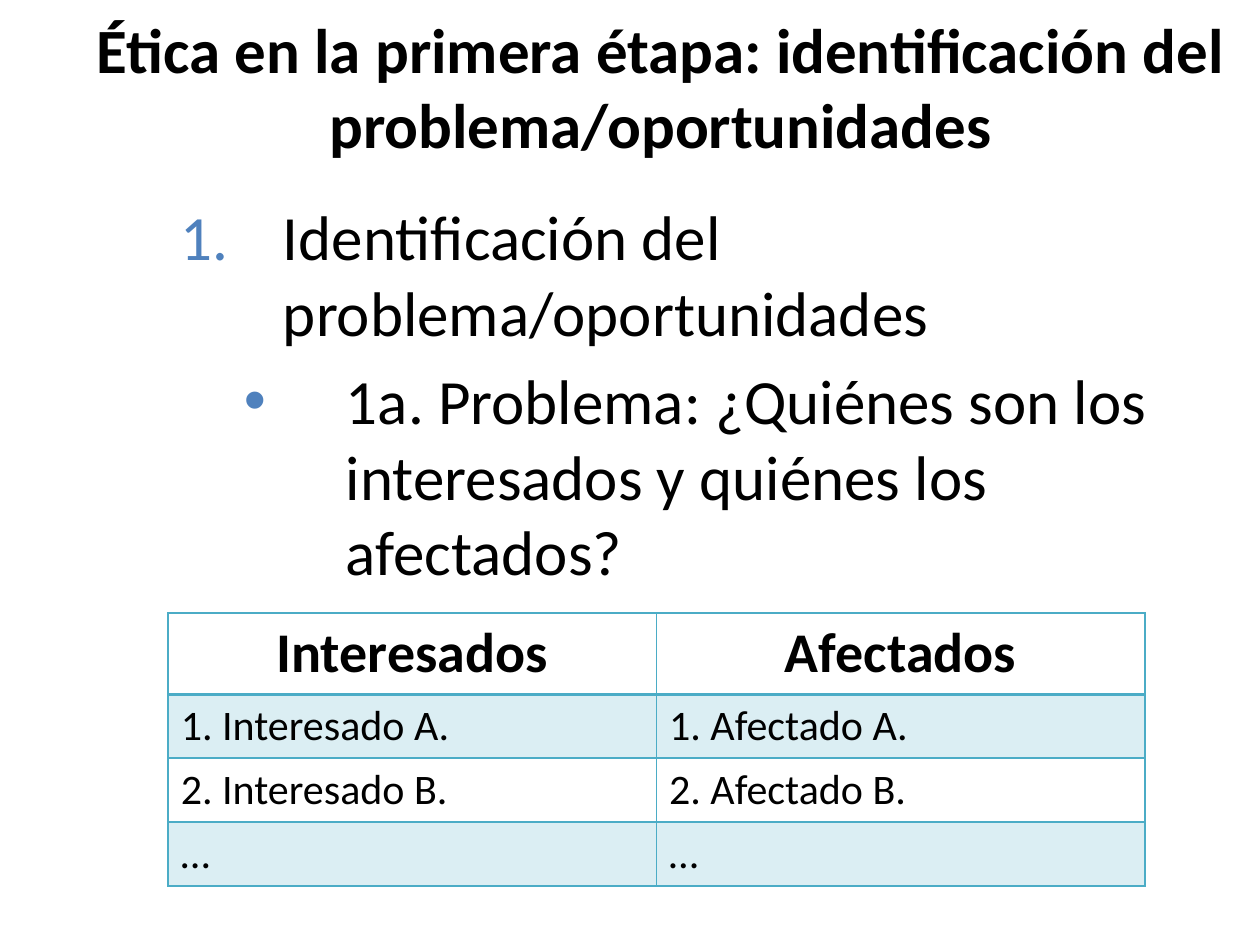
from dataclasses import dataclass

from lxml.etree import SubElement
from pptx import Presentation
from pptx.dml.color import RGBColor
from pptx.enum.text import MSO_ANCHOR, MSO_AUTO_SIZE, PP_ALIGN
from pptx.oxml.ns import qn
from pptx.util import Cm, Pt

COLORS = {"text": "000000", "bullet": "4F81BD", "table": "4BACC6"}
FONT = "Calibri"


@dataclass
class Box:
    left: float
    top: float
    width: float
    height: float


@dataclass
class ListItem:
    text: str
    level: int
    margin: float
    bullet_tag: str
    bullet_attributes: dict


TITLE = "Ética en la primera étapa: identificación del problema/oportunidades"
TITLE_BOX = Box(1.47, 0.64, 23.7, 2.74)
LIST_BOX = Box(2.12, 3.86, 22.23, 10.11)
TABLE_BOX = Box(3.39, 12.36, 19.69, 5.5)
HANGING = 2.06
ITEMS = [
    ListItem("Identificación del problema/oportunidades", 0, 3.33,
             "a:buAutoNum", {"type": "arabicPeriod"}),
    ListItem("1a. Problema: ¿Quiénes son los interesados y quiénes los afectados?",
             1, 4.6, "a:buChar", {"char": "•"}),
]
ROWS = [
    ("Interesados", "Afectados"),
    ("1. Interesado A.", "1. Afectado A."),
    ("2. Interesado B.", "2. Afectado B."),
    ("…", "…"),
]
HEADER_HEIGHT = 1.63
ROW_HEIGHT = 1.29


def place(shape, box: Box) -> None:
    shape.left, shape.top = Cm(box.left), Cm(box.top)
    shape.width, shape.height = Cm(box.width), Cm(box.height)


def add_text(paragraph, text: str, size: int, bold: bool = False) -> None:
    run = paragraph.add_run()
    run.text = text
    run.font.name = FONT
    run.font.size = Pt(size)
    run.font.bold = bold
    run.font.color.rgb = RGBColor.from_string(COLORS["text"])


def draw_title(shape) -> None:
    place(shape, TITLE_BOX)
    frame = shape.text_frame
    frame.auto_size = MSO_AUTO_SIZE.NONE
    frame.vertical_anchor = MSO_ANCHOR.BOTTOM
    paragraph = frame.paragraphs[0]
    paragraph.alignment = PP_ALIGN.CENTER
    add_text(paragraph, TITLE, 36, bold=True)


def draw_item(paragraph, item: ListItem) -> None:
    paragraph.level = item.level
    add_text(paragraph, item.text, 36)
    properties = paragraph._p.get_or_add_pPr()
    properties.set("marL", str(Cm(item.margin)))
    properties.set("indent", str(-Cm(HANGING)))
    color = SubElement(properties, qn("a:buClr"))
    SubElement(color, qn("a:srgbClr"), val=COLORS["bullet"])
    SubElement(properties, qn("a:buFont"), typeface="Arial" if item.level else FONT)
    SubElement(properties, qn(item.bullet_tag), item.bullet_attributes)


def draw_list(shape) -> None:
    place(shape, LIST_BOX)
    frame = shape.text_frame
    frame.auto_size = MSO_AUTO_SIZE.NONE
    for index, item in enumerate(ITEMS):
        paragraph = frame.add_paragraph() if index else frame.paragraphs[0]
        draw_item(paragraph, item)


def set_borders(cell, widths: dict[str, int]) -> None:
    properties = cell._tc.get_or_add_tcPr()
    for position, (side, width) in enumerate(widths.items()):
        line = SubElement(properties, qn(f"a:ln{side}"), w=str(Pt(width)))
        fill = SubElement(line, qn("a:solidFill"))
        SubElement(fill, qn("a:srgbClr"), val=COLORS["table"])
        properties.insert(position, line)


def draw_cell(cell, text: str, row: int) -> None:
    header = row == 0
    paragraph = cell.text_frame.paragraphs[0]
    paragraph.alignment = PP_ALIGN.CENTER if header else PP_ALIGN.LEFT
    add_text(paragraph, text, 32 if header else 24, bold=header)
    if row % 2:
        cell.fill.solid()
        cell.fill.fore_color.rgb = RGBColor.from_string(COLORS["table"])
        color = cell._tc.tcPr.find(".//" + qn("a:srgbClr"))
        SubElement(color, qn("a:alpha"), val="20000")
    else:
        cell.fill.background()
    set_borders(cell, {"L": 1, "R": 1, "T": 2 if row == 1 else 1, "B": 2 if header else 1})


def draw_table(slide) -> None:
    box = TABLE_BOX
    shape = slide.shapes.add_table(len(ROWS), len(ROWS[0]), Cm(box.left), Cm(box.top),
                                   Cm(box.width), Cm(box.height))
    slide.shapes._spTree.insert(2, shape._element)
    for row, texts in enumerate(ROWS):
        shape.table.rows[row].height = Cm(ROW_HEIGHT if row else HEADER_HEIGHT)
        for column, text in enumerate(texts):
            draw_cell(shape.table.cell(row, column), text, row)


def main() -> None:
    presentation = Presentation()
    presentation.slide_width, presentation.slide_height = Cm(25.4), Cm(19.05)
    slide = presentation.slides.add_slide(presentation.slide_layouts[1])
    draw_title(slide.shapes.title)
    draw_list(slide.placeholders[1])
    draw_table(slide)
    presentation.save("out.pptx")


if __name__ == "__main__":
    main()
